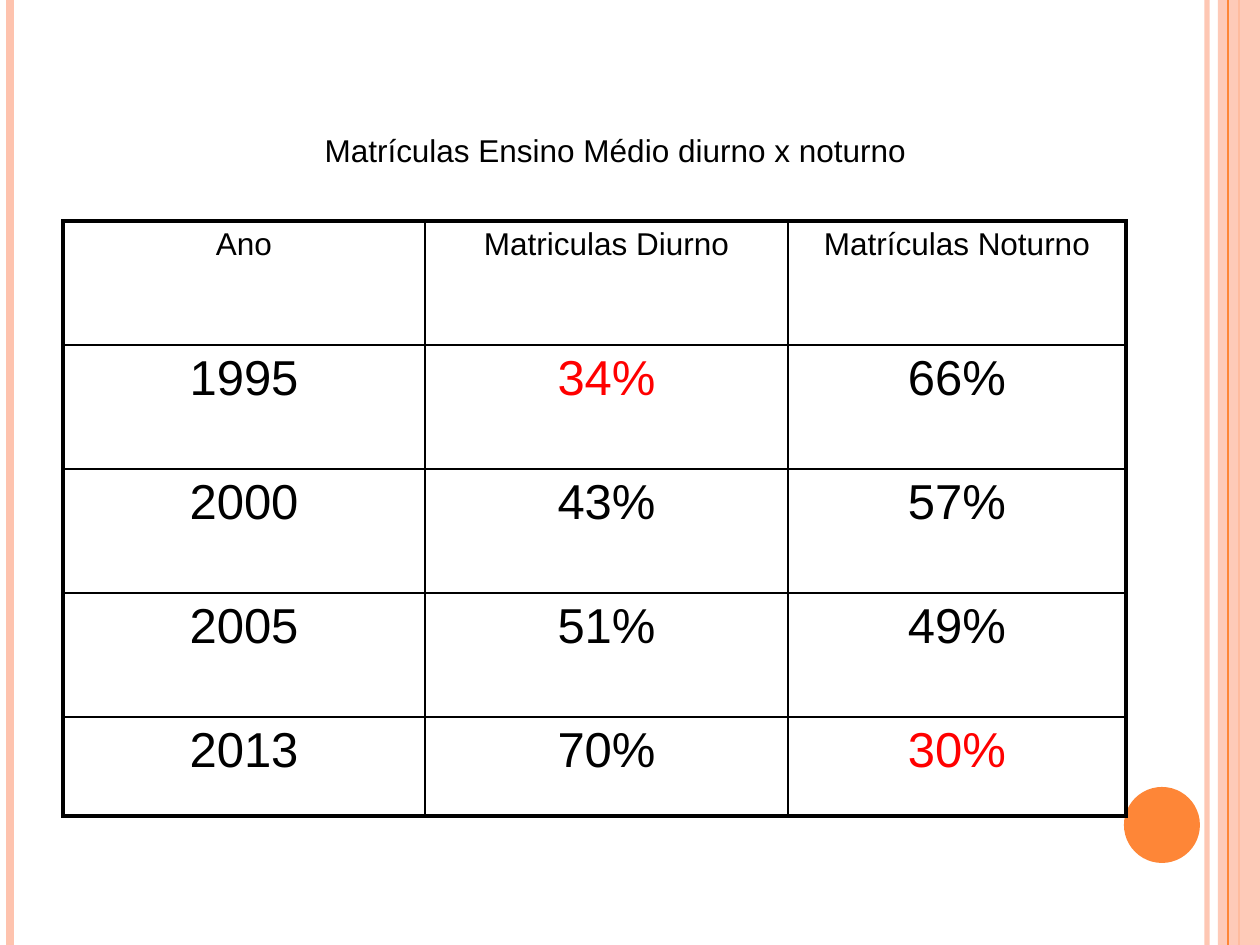
"""Build a slide with a table of day and night school enrolment."""
from lxml import etree
from pptx import Presentation
from pptx.dml.color import RGBColor
from pptx.enum.shapes import MSO_CONNECTOR, MSO_SHAPE
from pptx.enum.text import MSO_ANCHOR, MSO_AUTO_SIZE, PP_ALIGN
from pptx.oxml.ns import qn
from pptx.util import Pt

LINE = MSO_CONNECTOR.STRAIGHT
RECT, OVAL = MSO_SHAPE.RECTANGLE, MSO_SHAPE.OVAL
TOP, FIT = MSO_ANCHOR.TOP, MSO_AUTO_SIZE.NONE
LEFT, MID = PP_ALIGN.LEFT, PP_ALIGN.CENTER

SCALE = 914400 / 126
WIDE, HIGH = 1260, 945
FONT, BLACK, RED = "Arial", "000000", "FF0000"
PEACH, ORANGE = "FEC3AE", "FE8637"

TITLE = "Matrículas Ensino Médio diurno x noturno"
ROWS = [
    ("Ano", "Matriculas Diurno", "Matrículas Noturno"),
    ("1995", "34%", "66%"),
    ("2000", "43%", "57%"),
    ("2005", "51%", "49%"),
    ("2013", "70%", "30%"),
]
MARKED = {"34%", "30%"}
COLS = [362, 363, 338]
TALL = [124, 124, 124, 124, 99]
BACK = [(1207, PEACH, 3, 93), (10, PEACH, 4.5, 100), (1239, ORANGE, 1.5, 100)]
FRONT = [(1228, ORANGE, 0.75, 100)]
BAND = (RECT, (1218, 0, 42, HIGH), PEACH, 87)
DOT = (OVAL, (1124, 787, 76, 76), ORANGE, 100)


def px(num):
    return round(num * SCALE)


def rgb(code):
    return RGBColor.from_string(code)


def fade(part, pct):
    if pct < 100:
        tint = next(part.iter(qn("a:srgbClr")))
        etree.SubElement(tint, qn("a:alpha")).set("val", str(pct * 1000))


def stripe(slide, x, color, width, pct):
    line = slide.shapes.add_connector(LINE, px(x), 0, px(x), px(HIGH))
    line.line.color.rgb = rgb(color)
    line.line.width = Pt(width)
    props = line._element.spPr
    fade(props, pct)
    etree.SubElement(props, qn("a:effectLst"))


def block(slide, kind, box, color, pct):
    shape = slide.shapes.add_shape(kind, *map(px, box))
    shape.shadow.inherit = False
    shape.fill.solid()
    shape.fill.fore_color.rgb = rgb(color)
    shape.line.fill.background()
    fade(shape._element.spPr, pct)


def style(para, size, color, align):
    para.alignment = align
    font = para.runs[0].font
    font.name, font.size, font.bold = FONT, Pt(size), False
    font.color.rgb = rgb(color)


def border(cell, side, width):
    edge = etree.SubElement(cell._tc.get_or_add_tcPr(), qn("a:ln" + side))
    edge.set("w", str(Pt(width)))
    fill = etree.SubElement(edge, qn("a:solidFill"))
    etree.SubElement(fill, qn("a:srgbClr")).set("val", BLACK)


def grid(slide):
    frame = slide.shapes.add_table(
        len(ROWS), len(COLS), px(63), px(221), px(sum(COLS)), px(sum(TALL)))
    table = frame.table
    table.first_row = table.horz_banding = False
    for col, width in zip(table.columns, COLS):
        col.width = px(width)
    for r, words in enumerate(ROWS):
        table.rows[r].height = px(TALL[r])
        size = 28 if r else 18
        for c, word in enumerate(words):
            cell = table.cell(r, c)
            cell.text_frame.text = word
            para = cell.text_frame.paragraphs[0]
            para.space_before = Pt(size * 0.2)
            style(para, size, RED if word in MARKED else BLACK, MID)
            outer = {"L": c == 0, "R": c == len(COLS) - 1,
                     "T": r == 0, "B": r == len(ROWS) - 1}
            for side, thick in outer.items():
                border(cell, side, 2.25 if thick else 1)
            cell.fill.background()


def head(slide):
    title = slide.shapes.title
    title.left, title.top = px(312), px(125)
    title.width, title.height = px(624), px(50)
    frame = title.text_frame
    frame.text = TITLE
    frame.word_wrap, frame.auto_size = True, FIT
    frame.vertical_anchor = TOP
    style(frame.paragraphs[0], 18, BLACK, LEFT)


def main():
    deck = Presentation()
    deck.slide_width, deck.slide_height = px(WIDE), px(HIGH)
    slide = deck.slides.add_slide(deck.slide_layouts[5])
    for item in BACK:
        stripe(slide, *item)
    block(slide, *BAND)
    for item in FRONT:
        stripe(slide, *item)
    block(slide, *DOT)
    grid(slide)
    head(slide)
    deck.save("out.pptx")


if __name__ == "__main__":
    main()
